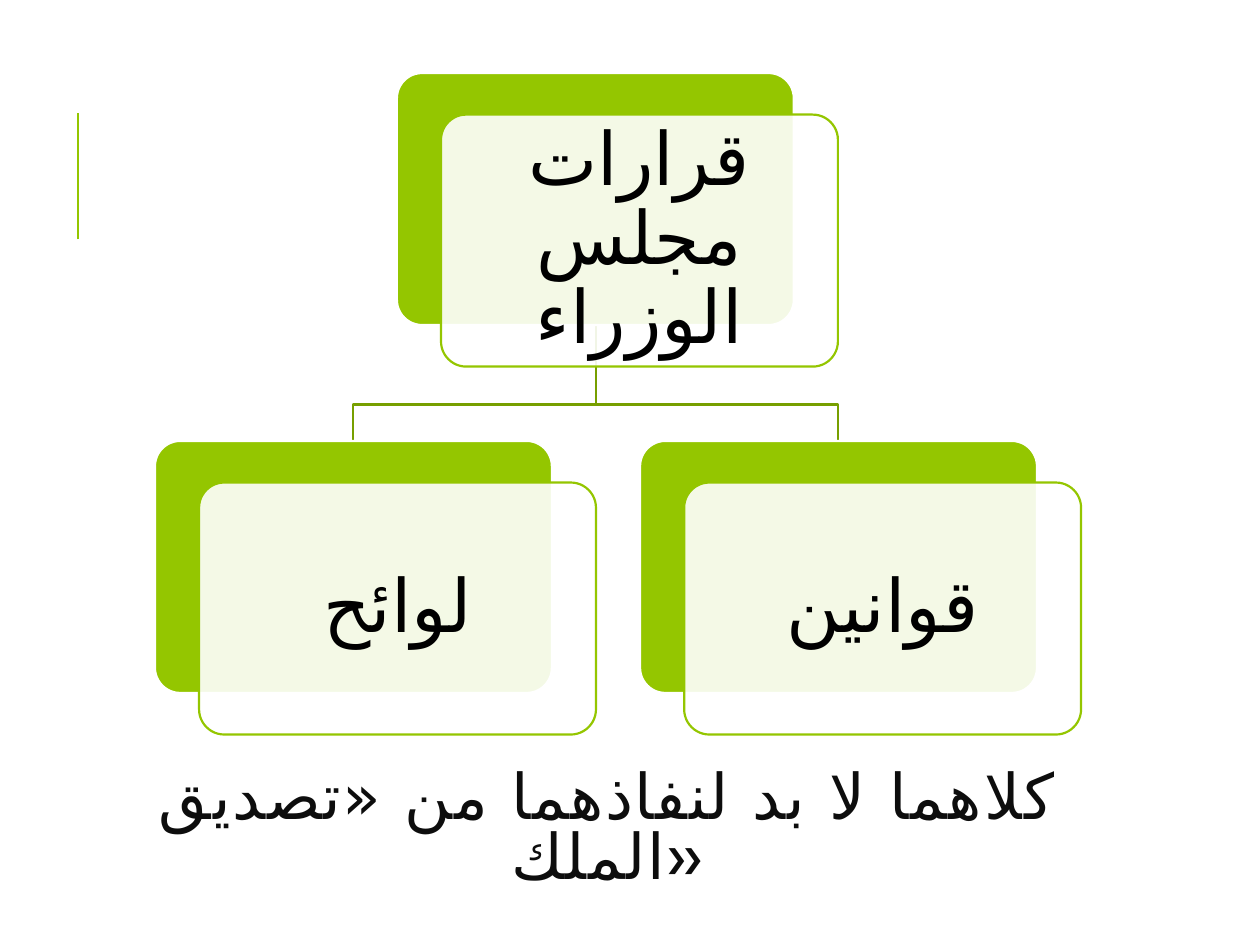
from pptx import Presentation, util as u
from pptx.dml.color import RGBColor
from pptx.enum import shapes, text
from pptx.oxml import ns, xmlchemy

PX = 9144  # 100 px to the inch
GREEN = RGBColor(0x94, 0xC6, 0x00)
DARK_GREEN = RGBColor(0x77, 0x9F, 0x00)
WHITE = RGBColor(0xFF, 0xFF, 0xFF)
BLACK = RGBColor(0, 0, 0)
TITLE_INK = RGBColor(0x0D, 0x0D, 0x0D)

CARD_W, CARD_H = 315, 200
SHIFT_X, SHIFT_Y = 35, 33
TEXT_INSET = 6
LEVEL_TOPS = (58, 350)
ROOT = (315, LEVEL_TOPS[0], "قرارات مجلس الوزراء")
CHILDREN = [
    (123, LEVEL_TOPS[1], "لوائح"),
    (508, LEVEL_TOPS[1], "قوانين"),
]


def add_child(parent, tag, **attrs):
    child = xmlchemy.OxmlElement(tag)
    for name, value in attrs.items():
        child.set(name, value)
    parent.append(child)
    return child


class Sketch:
    """Holds the current slide and the style shared by its elements."""

    line_width = 1.25
    body_font, body_size = "Calibri", 42
    title_font, title_size = "Cabin", 36
    arabic_font = "DejaVu Sans"  # the Latin fonts have no Arabic letters

    def __init__(self, s):
        self.s = s

    def emu(self, *lengths):
        return [n * PX for n in lengths]

    def style_run(self, r, font, size, color):
        r.font.name = font
        r.font.size = u.Pt(size)
        r.font.color.rgb = color
        rPr = r._r.get_or_add_rPr()
        rPr.set("lang", "ar-SA")
        add_child(rPr, "a:cs", typeface=self.arabic_font)

    def rule(self, x, top, bottom):
        c = self.s.shapes.add_connector(
            shapes.MSO_CONNECTOR.STRAIGHT, *self.emu(x, bottom, x, top))
        c.line.color.rgb = GREEN
        c.line.width = u.Pt(1.5)
        add_child(c._element.spPr, "a:effectLst")

    def branch(self, points):
        """Draw an open polyline through the points."""
        start, *rest = [self.emu(*point) for point in points]
        builder = self.s.shapes.build_freeform(*start)
        builder.add_line_segments(rest, close=False)
        sp = builder.convert_to_shape()
        sp.shadow.inherit = False
        sp.fill.background()
        sp.line.color.rgb = DARK_GREEN
        sp.line.width = u.Pt(self.line_width)

    def panel(self, x, y, fill, line, opacity=100):
        sp = self.s.shapes.add_shape(
            shapes.MSO_SHAPE.ROUNDED_RECTANGLE, *self.emu(x, y, CARD_W, CARD_H))
        sp.adjustments[0] = 0.1
        sp.shadow.inherit = False
        sp.fill.solid()
        sp.fill.fore_color.rgb = fill
        if opacity < 100:
            clr = sp._element.spPr.find(ns.qn("a:solidFill"))[0]
            add_child(clr, "a:alpha", val=str(opacity * 1000))
        sp.line.color.rgb = line
        sp.line.width = u.Pt(self.line_width)

    def label(self, x, y, w, h, words):
        tf = self.s.shapes.add_textbox(*self.emu(x, y, w, h)).text_frame
        tf.word_wrap = True
        tf.vertical_anchor = text.MSO_ANCHOR.MIDDLE
        tf.margin_left = tf.margin_right = 17 * PX
        tf.margin_top = tf.margin_bottom = 17 * PX
        tf.text = words
        p = tf.paragraphs[0]
        p.alignment = text.PP_ALIGN.CENTER
        p.line_spacing = 0.9
        p._p.get_or_add_pPr().set("rtl", "1")
        self.style_run(p.runs[0], self.body_font, self.body_size, BLACK)

    def card(self, x, y, words):
        """Draw a green panel, a translucent panel shifted over it and a label."""
        self.panel(x, y, GREEN, WHITE)
        x, y = x + SHIFT_X, y + SHIFT_Y
        self.panel(x, y, WHITE, GREEN, opacity=90)
        self.label(x + TEXT_INSET, y + TEXT_INSET,
                   CARD_W - 2 * TEXT_INSET, CARD_H - 2 * TEXT_INSET, words)

    def title(self, x, y, w, h, words):
        sp = self.s.shapes.title
        sp.left, sp.top, sp.width, sp.height = self.emu(x, y, w, h)
        tf = sp.text_frame
        tf.text = words
        tf.word_wrap = True
        tf.auto_size = text.MSO_AUTO_SIZE.NONE
        tf.vertical_anchor = text.MSO_ANCHOR.MIDDLE
        p = tf.paragraphs[0]
        p.alignment = text.PP_ALIGN.CENTER
        p.line_spacing = 0.8
        r = p.runs[0]
        self.style_run(r, self.title_font, self.title_size, TITLE_INK)
        r._r.get_or_add_rPr().set("spc", "100")


def main():
    prs = Presentation()
    prs.slide_width, prs.slide_height = 1000 * PX, 750 * PX
    sketch = Sketch(prs.slides.add_slide(prs.slide_layouts[5]))

    sketch.rule(62, 90, 190)
    root_x, root_y, _ = ROOT
    trunk_x, trunk_top, fork_y = root_x + (CARD_W + 1) // 2, root_y + CARD_H, 321
    for x, y, _ in CHILDREN:
        child_x = x + CARD_W // 2
        sketch.branch([(trunk_x, trunk_top), (trunk_x, fork_y),
                       (child_x, fork_y), (child_x, y)])
    for card in (ROOT, *CHILDREN):
        sketch.card(*card)
    sketch.title(83, 578, 797, 164, "كلاهما لا بد لنفاذهما من «تصديق الملك»")

    prs.save("out.pptx")


if __name__ == "__main__":
    main()
